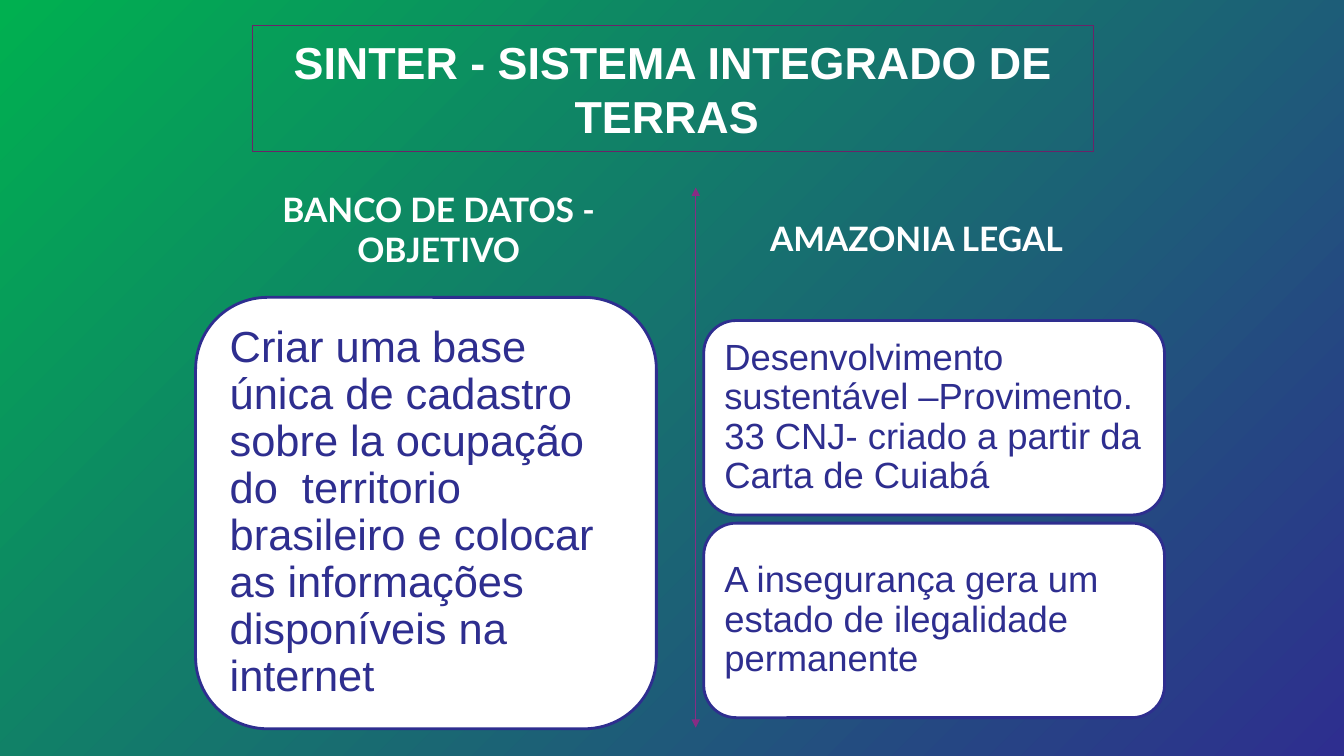
from lxml import etree
from pptx import Presentation, util as u
from pptx.dml.color import RGBColor
from pptx.enum import shapes, text
from pptx.oxml.ns import qn

COLORS = {"green": "00B050", "indigo": "2E2E8F", "white": "FFFFFF",
          "plum": "6B2368", "magenta": "882C84"}
CARD_WIDTH = 4.57


def rgb(name):
    return RGBColor.from_string(COLORS[name])


def write(shape, words, size, font="Arial", color="white", bold=False,
          align=text.PP_ALIGN.CENTER, anchor=text.MSO_ANCHOR.MIDDLE,
          inset=0.1, spacing=1.0):
    frame = shape.text_frame
    frame.word_wrap = True
    frame.vertical_anchor = anchor
    frame.margin_left = frame.margin_right = u.Inches(inset)
    frame.margin_top = frame.margin_bottom = u.Inches(inset)
    paragraph = frame.paragraphs[0]
    paragraph.alignment = align
    paragraph.line_spacing = spacing
    run = paragraph.add_run()
    run.text = words
    run.font.name = font
    run.font.size = u.Pt(size)
    run.font.bold = bold
    run.font.color.rgb = rgb(color)


def outlined(slide, kind, box, line, width, fill=None):
    shape = slide.shapes.add_shape(kind, *map(u.Inches, box))
    shape.shadow.inherit = False
    if fill:
        shape.fill.solid()
        shape.fill.fore_color.rgb = rgb(fill)
    else:
        shape.fill.background()
    shape.line.color.rgb = rgb(line)
    shape.line.width = u.Pt(width)
    return shape


def paint_background(slide):
    fill = slide.background.fill
    fill.gradient()
    fill.gradient_angle = 315
    for stop, name in zip(fill.gradient_stops, ("green", "indigo")):
        stop.color.rgb = rgb(name)


def add_title(slide, box, words):
    title = outlined(slide, shapes.MSO_SHAPE.RECTANGLE, box, "plum", 0.75)
    write(title, words, 32, bold=True)


def add_heading(slide, box, words):
    heading = slide.shapes.add_textbox(*map(u.Inches, box))
    write(heading, words, 24, font="Lato", bold=True,
          anchor=text.MSO_ANCHOR.BOTTOM)


def add_cards(slide, box, statements, size, inset, gap=0.08):
    """Stack equal rounded cards down the box."""
    left, top, width, height = box
    card_height = (height - gap * (len(statements) - 1)) / len(statements)
    for row, statement in enumerate(statements):
        card_top = top + row * (card_height + gap)
        card = outlined(slide, shapes.MSO_SHAPE.ROUNDED_RECTANGLE,
                        (left, card_top, width, card_height),
                        "indigo", 2, fill="white")
        write(card, statement, size, color="indigo", inset=inset,
              align=text.PP_ALIGN.LEFT, spacing=0.9)


def add_divider(slide, x, top, bottom):
    divider = slide.shapes.add_connector(
        shapes.MSO_CONNECTOR.STRAIGHT, *map(u.Inches, (x, top, x, bottom)))
    divider.line.color.rgb = rgb("magenta")
    divider.line.width = u.Pt(0.75)
    line = divider.line._get_or_add_ln()
    for end in ("a:headEnd", "a:tailEnd"):
        etree.SubElement(line, qn(end), type="triangle")
    etree.SubElement(divider._element.spPr, qn("a:effectLst"))


def main():
    deck = Presentation()
    deck.slide_width, deck.slide_height = u.Inches(13.33), u.Inches(7.5)
    slide = deck.slides.add_slide(deck.slide_layouts[6])
    paint_background(slide)
    add_title(slide, (2.5, 0.25, 8.35, 1.25),
              "SINTER - SISTEMA INTEGRADO DE TERRAS ")

    # Left column: the database and its goal
    add_heading(slide, (2.14, 1.97, 4.42, 0.8), "BANCO DE DATOS - OBJETIVO")
    add_cards(slide, (1.94, 2.95, CARD_WIDTH, 4.28), [
        "Criar uma base única de cadastro sobre la ocupação do  territorio "
        "brasileiro e colocar as informações disponíveis na internet",
    ], size=31, inset=0.13)

    # Right column: the Amazon region
    add_heading(slide, (6.51, 1.86, 5.16, 0.8), "AMAZONIA LEGAL")
    add_cards(slide, (6.98, 3.18, CARD_WIDTH, 3.94), [
        "Desenvolvimento sustentável –Provimento. 33 CNJ- criado a partir "
        "da Carta de Cuiabá",
        "A insegurança gera um estado de ilegalidade permanente",
    ], size=26, inset=0.11)

    add_divider(slide, 6.9, 1.86, 7.22)
    deck.save("out.pptx")


if __name__ == "__main__":
    main()
